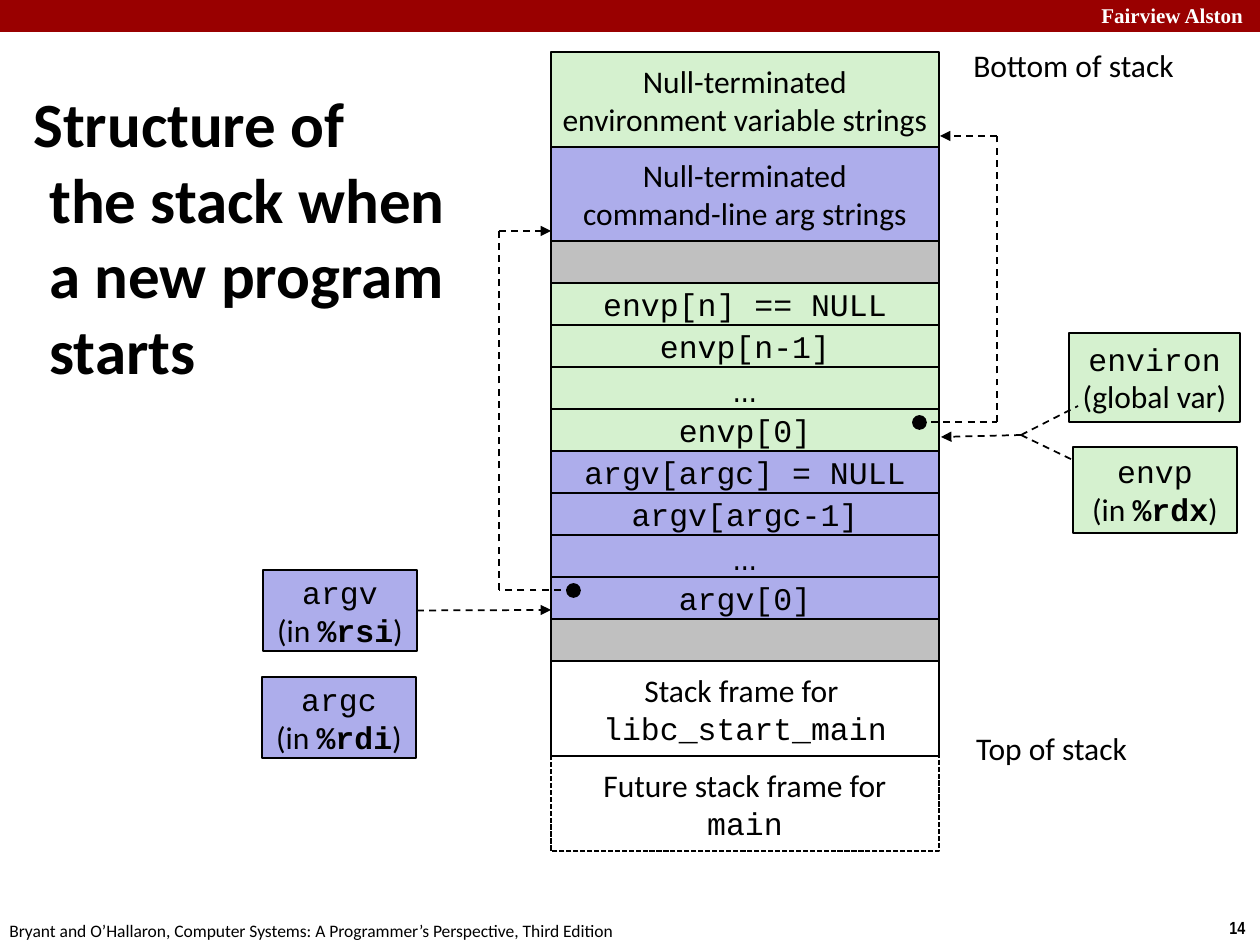
from lxml import etree
from pptx import Presentation
from pptx import util as u
from pptx.dml.color import RGBColor
from pptx.enum import dml, shapes, text
from pptx.oxml import ns

PX = 914400 / 126
BLACK = RGBColor(0x00, 0x00, 0x00)
WHITE = RGBColor(0xFF, 0xFF, 0xFF)
RED = RGBColor(0x99, 0x00, 0x00)
GREEN = RGBColor(0xD5, 0xF1, 0xCF)
VIOLET = RGBColor(0xAD, 0xAD, 0xEB)
GRAY = RGBColor(0xC0, 0xC0, 0xC0)
SANS, MONO, NARROW, SERIF = "Calibri", "Courier New", "Arial Narrow", "Times New Roman"
LEFT, CENTER = text.PP_ALIGN.LEFT, text.PP_ALIGN.CENTER
RECTANGLE, OVAL = shapes.MSO_SHAPE.RECTANGLE, shapes.MSO_SHAPE.OVAL


def emu(*lengths):
    """Turn px lengths into EMU."""
    return [u.Emu(round(length * PX)) for length in lengths]


def write(shape, lines, size=18, color=BLACK, bold=False, align=CENTER,
          anchor=text.MSO_ANCHOR.MIDDLE, wrap=False):
    """Fill a shape with lines, each a list of (words, font) or (words, font, bold) spans."""
    frame = shape.text_frame
    frame.word_wrap = wrap
    frame.vertical_anchor = anchor
    for index, spans in enumerate(lines):
        para = frame.add_paragraph() if index else frame.paragraphs[0]
        para.alignment = align
        para.font.size = u.Pt(size)
        para.font.color.rgb = color
        para.font.bold = bold
        if len(spans) == 1:
            para.text, para.font.name = spans[0]
            continue
        for words, font, *strong in spans:
            span = para.add_run()
            span.text = words
            span.font.name = font
            span.font.bold = bool(strong)


def add_text(page, box, lines, **style):
    """Add a text box."""
    label = page.shapes.add_textbox(*emu(*box))
    write(label, lines, **style)
    return label


def add_block(page, box, fill=None, lines=(), kind=RECTANGLE, line=BLACK, dash=None):
    """Add an outlined shape with centred text."""
    block = page.shapes.add_shape(kind, *emu(*box))
    block.shadow.inherit = False
    if fill is None:
        block.fill.background()
    else:
        block.fill.solid()
        block.fill.fore_color.rgb = fill
    block.line.color.rgb = line
    block.line.width = u.Pt(1)
    if dash:
        block.line.dash_style = dash
    write(block, lines)
    return block


def add_dashed(page, start, end, arrow=False):
    """Add a dashed line, with an arrowhead at its end if asked."""
    line = page.shapes.add_connector(shapes.MSO_CONNECTOR.STRAIGHT, *emu(*start, *end))
    line.line.color.rgb = BLACK
    line.line.width = u.Pt(1)
    line.line.dash_style = dml.MSO_LINE.DASH
    properties = line._element.spPr
    if arrow:
        etree.SubElement(line.line._get_or_add_ln(), ns.qn("a:tailEnd"), type="triangle")
    etree.SubElement(properties, ns.qn("a:effectLst"))
    return line


def draw_frame(page, box):
    """Draw the top band, footer, page number and title."""
    left, top, width, height = box
    add_block(page, (left, top, width, 31), RED, line=RED)
    anchor = text.MSO_ANCHOR.TOP
    add_text(page, (left + width - 171, top - 4, 180, 38), [[("Fairview Alston", SERIF)]],
             size=12, color=WHITE, bold=True, align=LEFT, anchor=anchor)
    add_text(page, (left + width - 43, top + height - 34, 43, 34), [[("14", NARROW)]],
             size=10, bold=True, align=LEFT, anchor=anchor)
    credit = ("Bryant and O’Hallaron, Computer Systems: "
              "A Programmer’s Perspective, Third Edition")
    add_text(page, (left - 3, top + height - 31, 640, 34), [[(credit, SANS)]],
             size=10, align=LEFT, anchor=anchor)
    title = add_text(page, (left + 21, top + 105, 450, 262),
                     [[("Structure of \vthe stack when a new program starts", SANS)]],
                     size=36, bold=True, align=LEFT, wrap=True)
    indent = title.text_frame.paragraphs[0]._p.get_or_add_pPr()
    indent.set("marL", str(emu(16)[0]))
    indent.set("indent", str(emu(-16)[0]))


def draw_stack(page, box):
    """Draw the stack from its bottom, at the top of the box, downwards."""
    left, top, width = box
    dots = [("...", NARROW)]
    rows = [
        (95, GREEN, [[("Null-terminated", SANS)], [("environment variable strings", SANS)]]),
        (94, VIOLET, [[("Null-terminated", SANS)], [("command-line arg strings", SANS)]]),
        (42, GRAY, []),
        (42, GREEN, [[("envp[n] == NULL", MONO)]]),
        (42, GREEN, [[("envp[n-1]", MONO)]]),
        (42, GREEN, [dots]),
        (42, GREEN, [[("envp[0]", MONO)]]),
        (42, VIOLET, [[("argv[argc] = NULL", MONO)]]),
        (42, VIOLET, [[("argv[argc-1]", MONO)]]),
        (42, VIOLET, [dots]),
        (42, VIOLET, [[("argv[0]", MONO)]]),
        (42, GRAY, []),
        (95, None, [[("Stack frame for ", SANS)], [("libc_start_main", MONO)]]),
        (95, None, [[("Future stack frame for", SANS)], [("main", MONO)]]),
    ]
    for index, (height, fill, lines) in enumerate(rows):
        future = index == len(rows) - 1
        block = add_block(page, (left, top, width, height), fill, lines,
                          dash=dml.MSO_LINE.SQUARE_DOT if future else None)
        if lines == [dots]:
            block.text_frame.paragraphs[0].font.size = u.Pt(20)
        top += height
    add_text(page, (left + 407, 40, 231, 50), [[("Bottom of stack", SANS)]])
    add_text(page, (left + 410, 723, 181, 50), [[("Top of stack", SANS)]])


def add_variable(page, box, fill, name, register):
    """Add a box for a variable held in a register."""
    place = [("(in ", SANS), (register, MONO, True), (")", SANS)]
    return add_block(page, box, fill, [[(name, MONO)], place])


def draw_elbow(page, dot, bend, target):
    """Draw a dashed path from a dot, over a bend, to an arrow at the target."""
    corners = [dot, (bend, dot[1]), (bend, target[1]), target]
    for start, end in zip(corners, corners[1:]):
        add_dashed(page, start, end, arrow=end == target)
    add_block(page, (dot[0] - 6, dot[1] - 6, 13, 13), BLACK, kind=OVAL)


def draw_arguments(page, box):
    """Draw the argv and argc boxes and the argv pointer."""
    left, top, width, height = box
    argv = add_variable(page, (left, top, width, height), VIOLET, "argv", "%rsi")
    add_variable(page, (left - 1, top + 107, width, height), VIOLET, "argc", "%rdi")
    middle = top + height // 2
    pointer = add_dashed(page, (left + width, middle), (left + 288, middle), arrow=True)
    pointer.begin_connect(argv, 3)


def draw_environment(page, box):
    """Draw the environ and envp boxes and their shared pointer."""
    left, top, width, height = box
    fork = (left - 48, top + 102)
    add_block(page, (left, top, width, height), GREEN,
              [[("environ", MONO)], [("(global var)", SANS)]])
    add_dashed(page, fork, (left + 9, top + 73))
    add_dashed(page, fork, (left + 8, top + 129))
    add_dashed(page, fork, (left - 128, top + 104), arrow=True)
    add_variable(page, (left + 4, top + 114, 164, 86), GREEN, "envp", "%rdx")


def main():
    """Build and save the deck."""
    deck = Presentation()
    deck.slide_width, deck.slide_height = emu(1260, 945)
    page = deck.slides.add_slide(deck.slide_layouts[6])
    draw_frame(page, (0, 0, 1260, 945))
    draw_stack(page, (551, 52, 388))
    draw_elbow(page, (573, 590), 499, (551, 231))
    draw_elbow(page, (919, 422), 997, (940, 136))
    draw_arguments(page, (263, 570, 154, 81))
    draw_environment(page, (1069, 333, 171, 89))
    deck.save("out.pptx")


if __name__ == "__main__":
    main()
